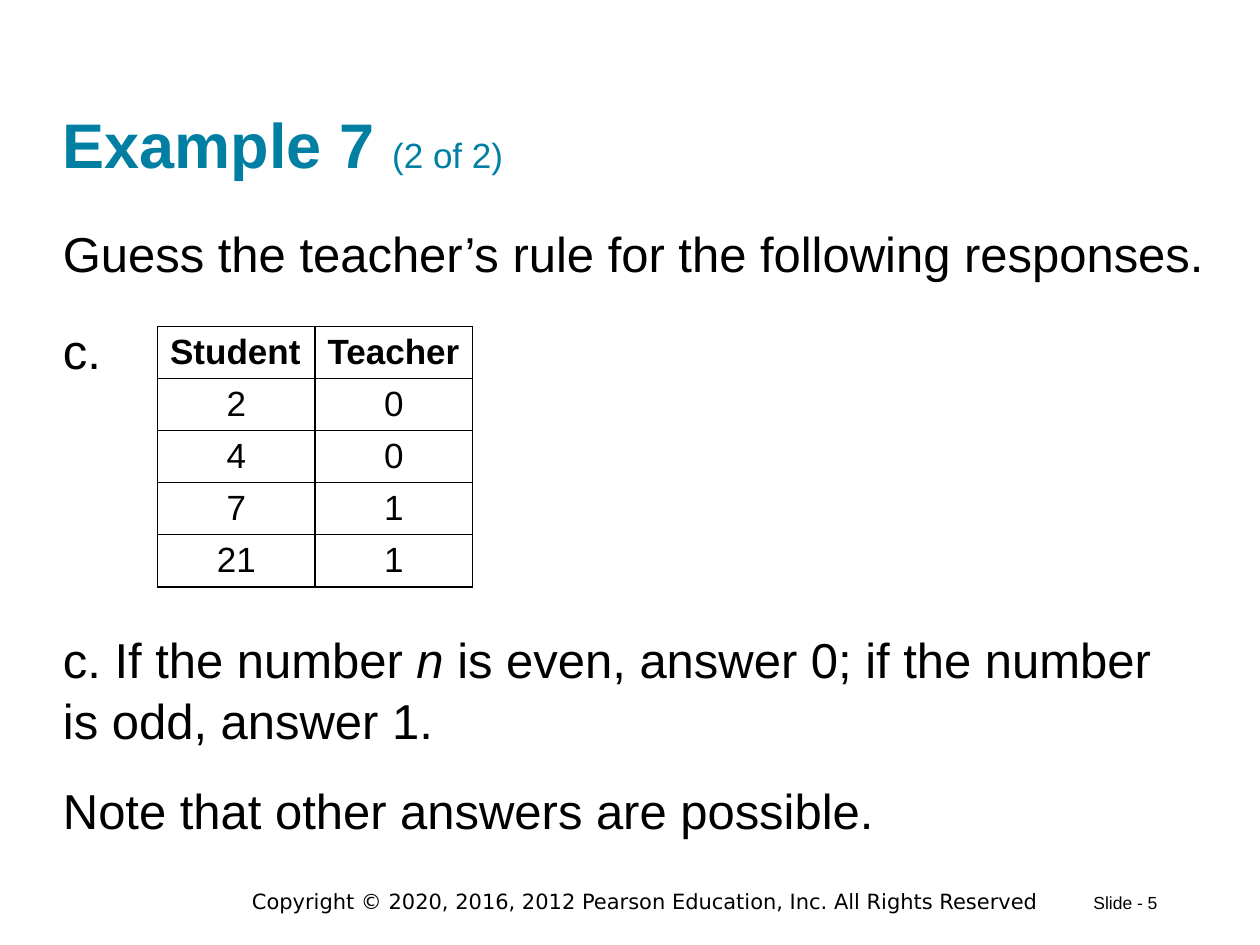
from lxml import etree
from pptx import Presentation
from pptx import util as u
from pptx.dml.color import RGBColor
from pptx.enum import text
from pptx.oxml.ns import qn

COLORS = {"title": "007FA3", "ink": "000000"}
WIDTH, HEIGHT = 10, 7.5
LEFT = WIDTH * 0.05
CONTENT_WIDTH = WIDTH * 0.9
COLUMN, ROW = WIDTH / 8, 0.41
RESPONSES = [("Student", "Teacher"), ("2", "0"), ("4", "0"), ("7", "1"), ("21", "1")]


def write(frame, content, size=28, color="ink", font="Arial", bold=False,
          align=text.PP_ALIGN.LEFT, spacing=None):
    runs = [(content, {})] if isinstance(content, str) else content
    paragraph = frame.paragraphs[0]
    paragraph.alignment = align
    if spacing:
        paragraph.line_spacing = spacing
    for words, changes in runs:
        run = paragraph.add_run()
        run.text = words
        run.font.name = font
        run.font.size = u.Pt(changes.get("size", size))
        run.font.bold = changes.get("bold", bold)
        run.font.italic = changes.get("italic", False)
        run.font.color.rgb = RGBColor.from_string(COLORS[color])


def add_text(slide, box, content, inset=0, wrap=True,
             anchor=text.MSO_ANCHOR.TOP, **style):
    frame = slide.shapes.add_textbox(*map(u.Inches, box)).text_frame
    frame.word_wrap = wrap
    frame.vertical_anchor = anchor
    frame.margin_left = frame.margin_right = u.Inches(inset)
    frame.margin_top = frame.margin_bottom = u.Inches(inset / 2)
    write(frame, content, **style)


def add_borders(cell):
    properties = cell._tc.get_or_add_tcPr()
    for position, side in enumerate(("lnL", "lnR", "lnT", "lnB")):
        line = etree.Element(qn(f"a:{side}"), w=str(u.Pt(1)))
        fill = etree.SubElement(line, qn("a:solidFill"))
        etree.SubElement(fill, qn("a:srgbClr"), val=COLORS["ink"])
        properties.insert(position, line)


def add_response_table(slide, left, top):
    rows, columns = len(RESPONSES), len(RESPONSES[0])
    box = (left, top, columns * COLUMN, rows * ROW)
    table = slide.shapes.add_table(rows, columns, *map(u.Inches, box)).table
    for row, values in zip(table.rows, RESPONSES):
        header = values == RESPONSES[0]
        align = text.PP_ALIGN.LEFT if header else text.PP_ALIGN.CENTER
        for cell, value in zip(row.cells, values):
            cell.fill.background()
            cell.margin_top = cell.margin_bottom = u.Inches(0.04)
            cell.vertical_anchor = text.MSO_ANCHOR.MIDDLE
            write(cell.text_frame, value, size=20, bold=header, align=align)
            add_borders(cell)


def main():
    presentation = Presentation()
    presentation.slide_width = u.Inches(WIDTH)
    presentation.slide_height = u.Inches(HEIGHT)
    slide = presentation.slides.add_slide(presentation.slide_layouts[6])

    add_text(slide, (1.83, 7, 6.58, 0.3),
             "Copyright © 2020, 2016, 2012 Pearson Education, Inc. All Rights Reserved",
             inset=0.1, size=12, font="DejaVu Sans", align=text.PP_ALIGN.CENTER)
    add_text(slide, (8.58, 7.03, 0.81, 0.27), "Slide - 5",
             inset=0.1, wrap=False, size=10)
    add_text(slide, (LEFT, 0.24, CONTENT_WIDTH, 1.2),
             [("Example 7 ", {}), ("(2 of 2)", {"size": 20, "bold": False})],
             anchor=text.MSO_ANCHOR.BOTTOM, size=36, color="title", bold=True)

    answer = [("c. If the number ", {}), ("n", {"italic": True}),
              (" is even, answer 0; if the number is odd, answer 1.", {})]
    body = [
        (1.75, 9.17, 0.42, "Guess the teacher’s rule for the following responses."),
        (2.52, 0.5, 0.48, "c."),
        (4.97, CONTENT_WIDTH, 0.92, answer),
        (6.17, CONTENT_WIDTH, 0.55, "Note that other answers are possible."),
    ]
    for top, width, height, content in body:
        add_text(slide, (LEFT, top, width, height), content, spacing=1.05)
    add_response_table(slide, COLUMN, 2.59)

    presentation.save("out.pptx")


if __name__ == "__main__":
    main()
